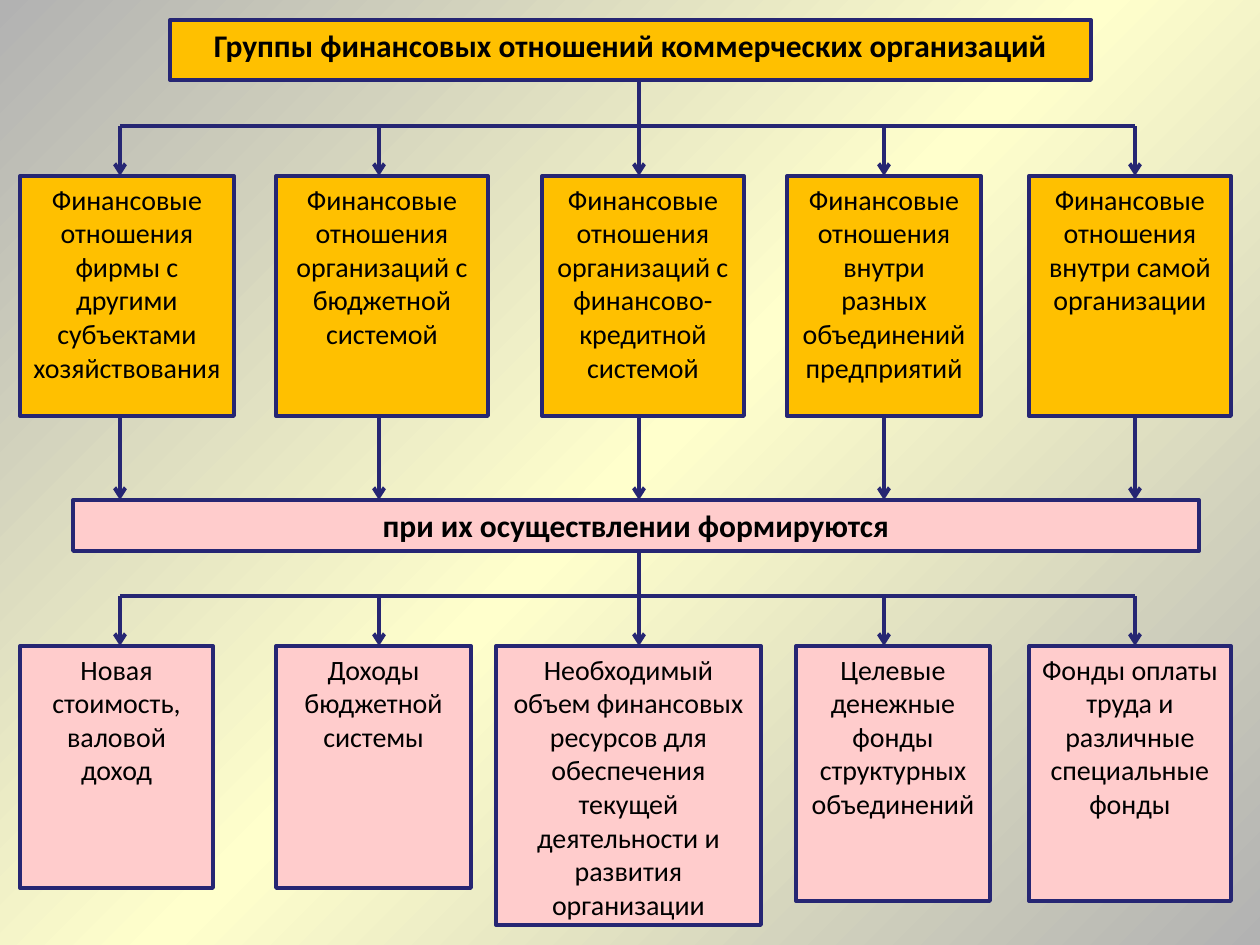
from dataclasses import dataclass
from copy import deepcopy

from lxml.etree import SubElement
from pptx import Presentation
from pptx.dml.color import RGBColor as RGB
from pptx.enum.shapes import MSO_CONNECTOR as CONN, MSO_SHAPE as SHAPE
from pptx.enum.text import MSO_ANCHOR as ANCHOR, MSO_AUTO_SIZE as AUTO, PP_ALIGN as ALIGN
from pptx.oxml.ns import qn
from pptx.util import Emu, Pt


@dataclass(frozen=True)
class Theme:
    """Colours, font and sizes of the slide."""
    gold: RGB = RGB.from_string("FFC000")
    pink: RGB = RGB.from_string("FFCCCC")
    navy: RGB = RGB.from_string("262673")
    text: RGB = RGB.from_string("000000")
    grey: RGB = RGB.from_string("B2B2B2")
    cream: RGB = RGB.from_string("FFFFCC")
    font: str = "Calibri"
    heading: Pt = Pt(18)
    body: Pt = Pt(16)
    gap: Pt = Pt(10)
    line: Pt = Pt(2.25)


THEME = Theme()
TOP, BOTTOM = 0, 2
COLUMNS = [120, 379, 639, 884, 1135]
CENTRE = COLUMNS[2]
RELATIONS = [
    (20, 214, 240, "Финансовые отношения фирмы с другими субъектами хозяйствования"),
    (276, 212, 240, "Финансовые отношения организаций с бюджетной системой"),
    (542, 202, 240, "Финансовые отношения организаций с финансово-кредитной системой"),
    (787, 194, 240, "Финансовые отношения внутри разных объединений предприятий"),
    (1029, 202, 240, "Финансовые отношения внутри самой организации"),
]
FUNDS = [
    (20, 193, 242, "Новая стоимость, валовой доход"),
    (276, 195, 242, "Доходы бюджетной системы"),
    (496, 265, 279, "Необходимый объем финансовых ресурсов для обеспечения "
                    "текущей деятельности и развития организации"),
    (796, 194, 255, "Целевые денежные фонды структурных объединений"),
    (1029, 202, 255, "Фонды оплаты труда и различные специальные фонды"),
]


def px(n):
    """Turn pixels into EMU at 126 pixels to the inch."""
    return Emu(round(n * 914400 / 126))


def paint_background(slide):
    """Fill the background with a diagonal grey-cream-grey gradient."""
    fill = slide.background.fill
    fill.gradient()
    fill.gradient_angle = 315
    stops = slide.element.find(".//" + qn("a:gsLst"))
    stops.append(deepcopy(stops[-1]))
    colors = (THEME.grey, THEME.cream, THEME.grey)
    for stop, pos, color in zip(fill.gradient_stops, (0, 0.5, 1), colors):
        stop.position = pos
        stop.color.rgb = color


def style_box(sp, fill, text, size, bold=False):
    """Give a box its fill, outline and centred text."""
    sp.fill.solid()
    sp.fill.fore_color.rgb = fill
    sp.line.color.rgb = THEME.navy
    sp.line.width = THEME.line
    tf = sp.text_frame
    tf.word_wrap = True
    tf.auto_size = AUTO.NONE
    tf.vertical_anchor = ANCHOR.TOP
    p = tf.paragraphs[0]
    p.alignment = ALIGN.CENTER
    p.space_after = THEME.gap
    r = p.add_run()
    r.text = text
    r.font.name = THEME.font
    r.font.size = size
    r.font.bold = bold
    r.font.color.rgb = THEME.text


def add_title(slide, x, y, w, h, text):
    """Turn the title placeholder into the top box."""
    sp = slide.shapes.title
    sp.left, sp.top, sp.width, sp.height = map(px, (x, y, w, h))
    style_box(sp, THEME.gold, text, THEME.heading, bold=True)
    return sp


def add_box(slide, x, y, w, h, fill, text, size=THEME.body, bold=False):
    """Add a filled rectangle with text."""
    sp = slide.shapes.add_shape(SHAPE.RECTANGLE, *map(px, (x, y, w, h)))
    sp.shadow.inherit = False
    style_box(sp, fill, text, size, bold)
    return sp


def add_row(slide, y, fill, items):
    """Add a row of boxes with a common top edge."""
    return [add_box(slide, x, y, w, h, fill, text) for x, w, h, text in items]


def add_line(slide, x1, y1, x2, y2, arrow=False):
    """Add a straight line, with an arrowhead at its end if wanted."""
    c = slide.shapes.add_connector(CONN.STRAIGHT, *map(px, (x1, y1, x2, y2)))
    c.line.color.rgb = THEME.navy
    c.line.width = THEME.line
    if arrow:
        SubElement(c.line._get_or_add_ln(), qn("a:tailEnd"), type="arrow")
    SubElement(c.element.spPr, qn("a:effectLst"))
    return c


def is_centred(sp, x):
    """Tell whether a box has its middle at x."""
    return abs(sp.left + sp.width // 2 - px(x)) <= 2


def add_tree(slide, parent_bottom, rail, boxes_top, boxes):
    """Branch from a parent box over a rail down to a row of boxes."""
    add_line(slide, COLUMNS[0], rail, COLUMNS[-1], rail)
    for x, sp in zip(COLUMNS, boxes):
        start = parent_bottom if x == CENTRE else rail
        c = add_line(slide, x, start, x, boxes_top, arrow=True)
        if is_centred(sp, x):
            c.end_connect(sp, TOP)


def add_drops(slide, top, bottom, boxes):
    """Lead an arrow from each box down to the bar."""
    for x, sp in zip(COLUMNS, boxes):
        c = add_line(slide, x, top, x, bottom, arrow=True)
        if is_centred(sp, x):
            c.begin_connect(sp, BOTTOM)


def main():
    """Build the slide and save it."""
    prs = Presentation()
    prs.slide_width, prs.slide_height = px(1260), px(945)
    slide = prs.slides.add_slide(prs.slide_layouts[5])
    paint_background(slide)
    add_title(slide, 170, 20, 921, 60,
              "Группы финансовых отношений коммерческих организаций")
    relations = add_row(slide, 176, THEME.gold, RELATIONS)
    add_tree(slide, 80, 126, 176, relations)
    add_box(slide, 73, 500, 1126, 51, THEME.pink,
            "при их осуществлении формируются", THEME.heading, bold=True)
    add_drops(slide, 416, 500, relations)
    funds = add_row(slide, 646, THEME.pink, FUNDS)
    add_tree(slide, 551, 596, 646, funds)
    prs.save("out.pptx")


if __name__ == "__main__":
    main()
